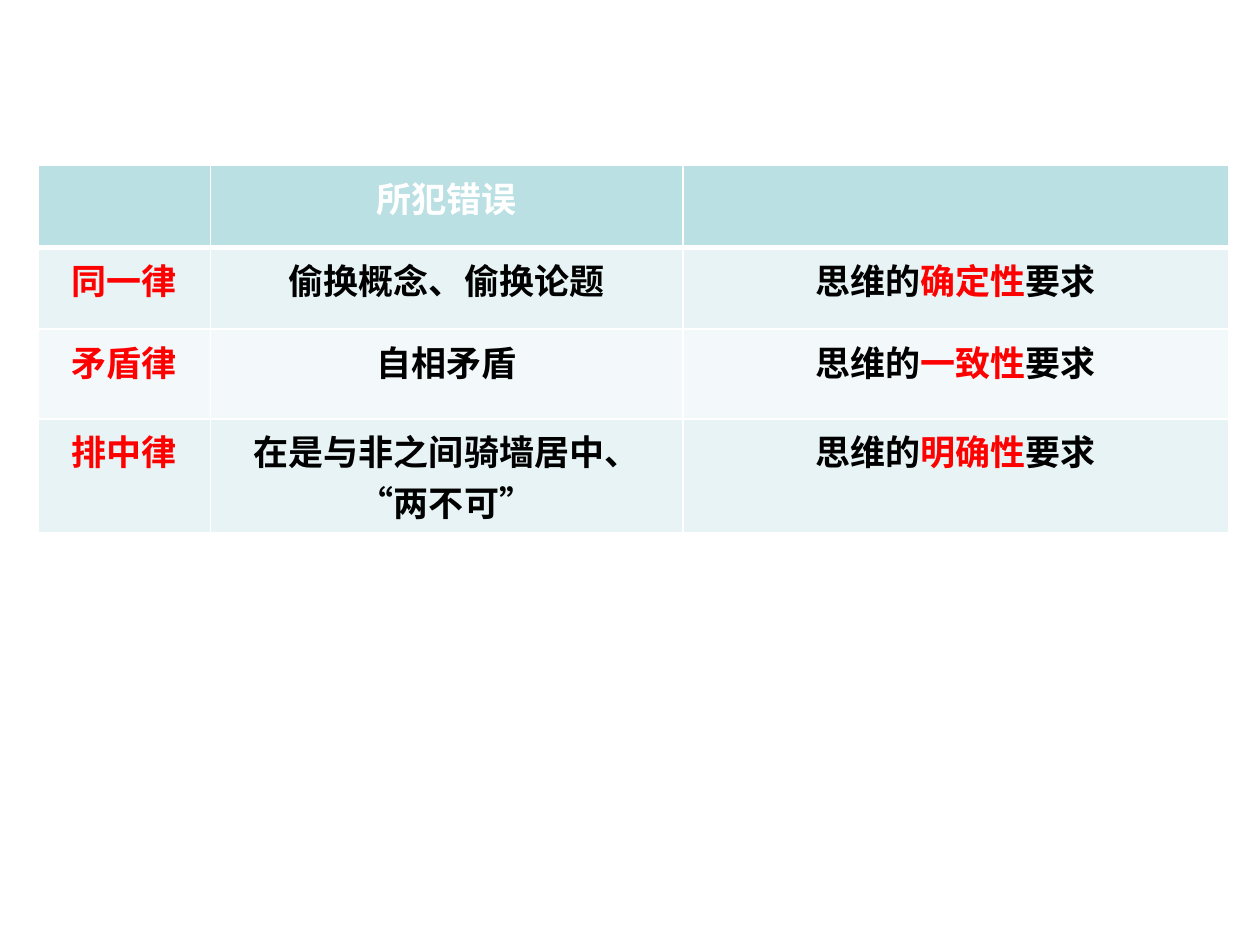
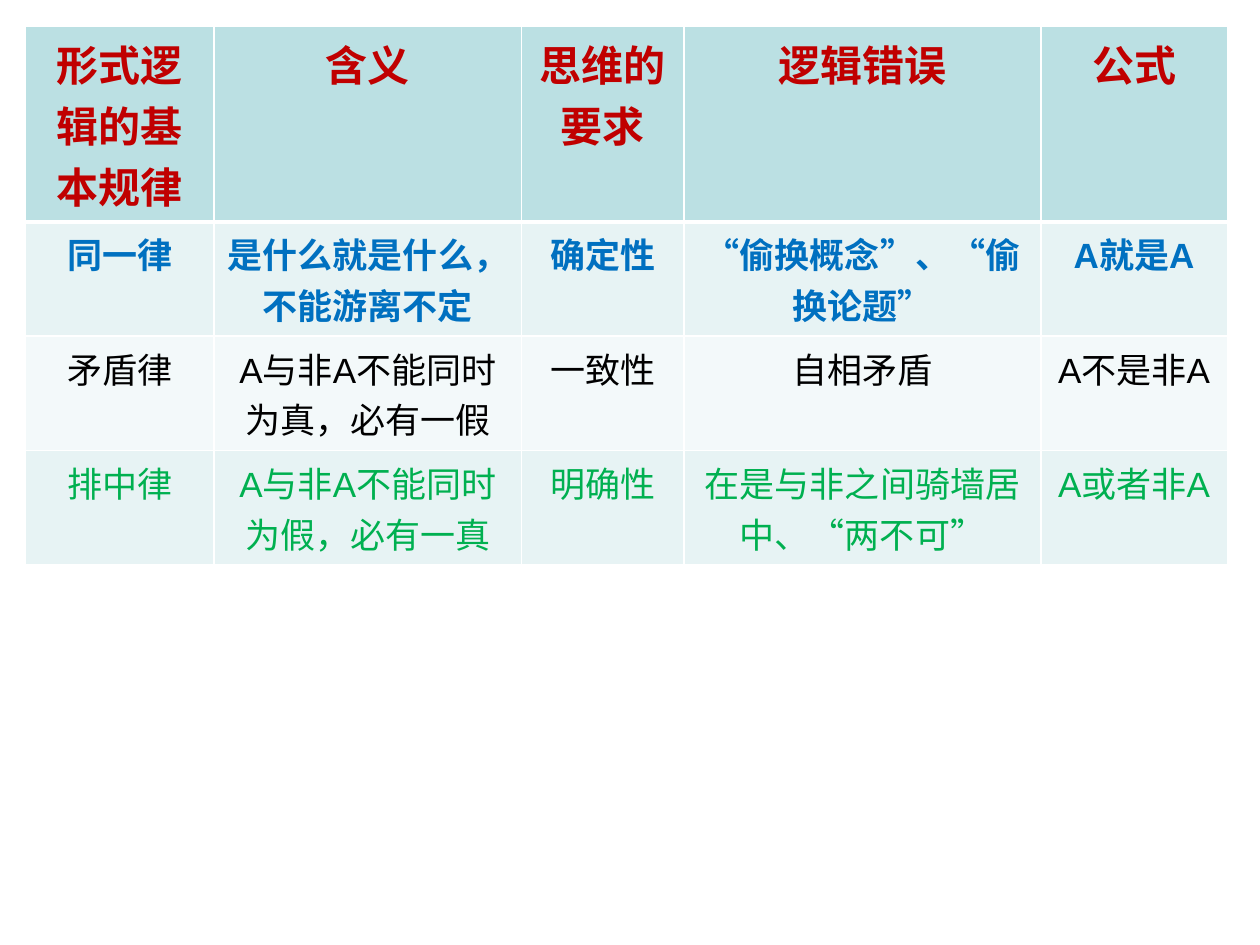
from dataclasses import dataclass

from pptx import Presentation
from pptx.dml.color import RGBColor
from pptx.enum.lang import MSO_LANGUAGE_ID
from pptx.enum.text import PP_ALIGN
from pptx.oxml import parse_xml
from pptx.oxml.ns import nsdecls
from pptx.util import Pt


@dataclass(frozen=True)
class Theme:
    font: str = "Arial"
    header_size: int = 24
    body_size: int = 20
    white: str = "FFFFFF"
    black: str = "000000"
    red: str = "FF0000"
    dark_red: str = "C00000"
    blue: str = "0070C0"
    green: str = "00B050"
    header_fill: str = "BBE0E3"
    band_fills: tuple = ("E7F3F4", "F3F9FA")
    line: int = 1
    header_line: int = 3


THEME = Theme()


def add_run(p, text, size=THEME.body_size, color=THEME.black, bold=True):
    r = p.add_run()
    r.text = text
    font = r.font
    font.name, font.size, font.bold = THEME.font, Pt(size), bold
    font.color.rgb = RGBColor.from_string(color)
    font.language_id = MSO_LANGUAGE_ID.SIMPLIFIED_CHINESE


def set_borders(cell, top, bottom):
    widths = {"lnL": THEME.line, "lnR": THEME.line, "lnT": top, "lnB": bottom}
    tc_pr = cell._tc.get_or_add_tcPr()
    for i, (tag, width) in enumerate(widths.items()):
        tc_pr.insert(i, parse_xml(
            f'<a:{tag} {nsdecls("a")} w="{Pt(width)}"><a:solidFill>'
            f'<a:srgbClr val="{THEME.white}"/></a:solidFill></a:{tag}>'))


def style_cell(cell, row):
    """Fill and rule a cell: a header row over alternating bands."""
    fill = THEME.band_fills[(row - 1) % 2] if row else THEME.header_fill
    cell.fill.solid()
    cell.fill.fore_color.rgb = RGBColor.from_string(fill)
    set_borders(cell,
                top=THEME.header_line if row == 1 else THEME.line,
                bottom=THEME.line if row else THEME.header_line)


def add_table(slide, left, top, col_widths, row_heights, rows):
    """Each cell is a list of (text, format) runs."""
    table = slide.shapes.add_table(
        len(rows), len(col_widths), Pt(left), Pt(top),
        Pt(sum(col_widths)), Pt(sum(row_heights))).table
    for column, width in zip(table.columns, col_widths):
        column.width = Pt(width)
    for i, (height, cells) in enumerate(zip(row_heights, rows)):
        table.rows[i].height = Pt(height)
        for j, runs in enumerate(cells):
            cell = table.cell(i, j)
            style_cell(cell, i)
            p = cell.text_frame.paragraphs[0]
            p.alignment = PP_ALIGN.CENTER
            for text, style in runs:
                add_run(p, text, **style)


def uniform_row(texts, **style):
    return [[(text, style)] if text else [] for text in texts]


def law_row(law, error, quality):
    red = {"color": THEME.red}
    return [[(law, red)], [(error, {})],
            [("思维的", {}), (quality, red), ("要求", {})]]


def add_errors_slide(prs):
    rows = [
        uniform_row(["", "所犯错误", ""], color=THEME.white),
        law_row("同一律", "偷换概念、偷换论题", "确定性"),
        law_row("矛盾律", "自相矛盾", "一致性"),
        law_row("排中律", "在是与非之间骑墙居中、“两不可”", "明确性"),
    ]
    slide = prs.slides.add_slide(prs.slide_layouts.get_by_name("Blank"))
    add_table(slide, 21.6, 94.5, [98.6, 270, 311.8], [46.8, 46.8, 51.2, 46.8], rows)


def add_summary_slide(prs):
    rows = [
        uniform_row(["形式逻辑的基本规律", "含义", "思维的要求", "逻辑错误", "公式"],
                    size=THEME.header_size, color=THEME.dark_red),
        uniform_row(["同一律", "是什么就是什么，不能游离不定", "确定性",
                     "“偷换概念”、“偷换论题”", "A就是A"], color=THEME.blue),
        uniform_row(["矛盾律", "A与非A不能同时为真，必有一假", "一致性",
                     "自相矛盾", "A不是非A"], bold=False),
        uniform_row(["排中律", "A与非A不能同时为假，必有一真", "明确性",
                     "在是与非之间骑墙居中、“两不可”", "A或者非A"],
                    color=THEME.green, bold=False),
    ]
    slide = prs.slides.add_slide(prs.slide_layouts.get_by_name("Blank"))
    add_table(slide, 14.4, 15.1, [108, 175.7, 92.9, 203.8, 106.6],
              [108] + [30.2] * 3, rows)


def main():
    prs = Presentation()
    prs.slide_width, prs.slide_height = Pt(720), Pt(540)
    add_errors_slide(prs)
    add_summary_slide(prs)
    prs.save("out.pptx")


if __name__ == "__main__":
    main()
